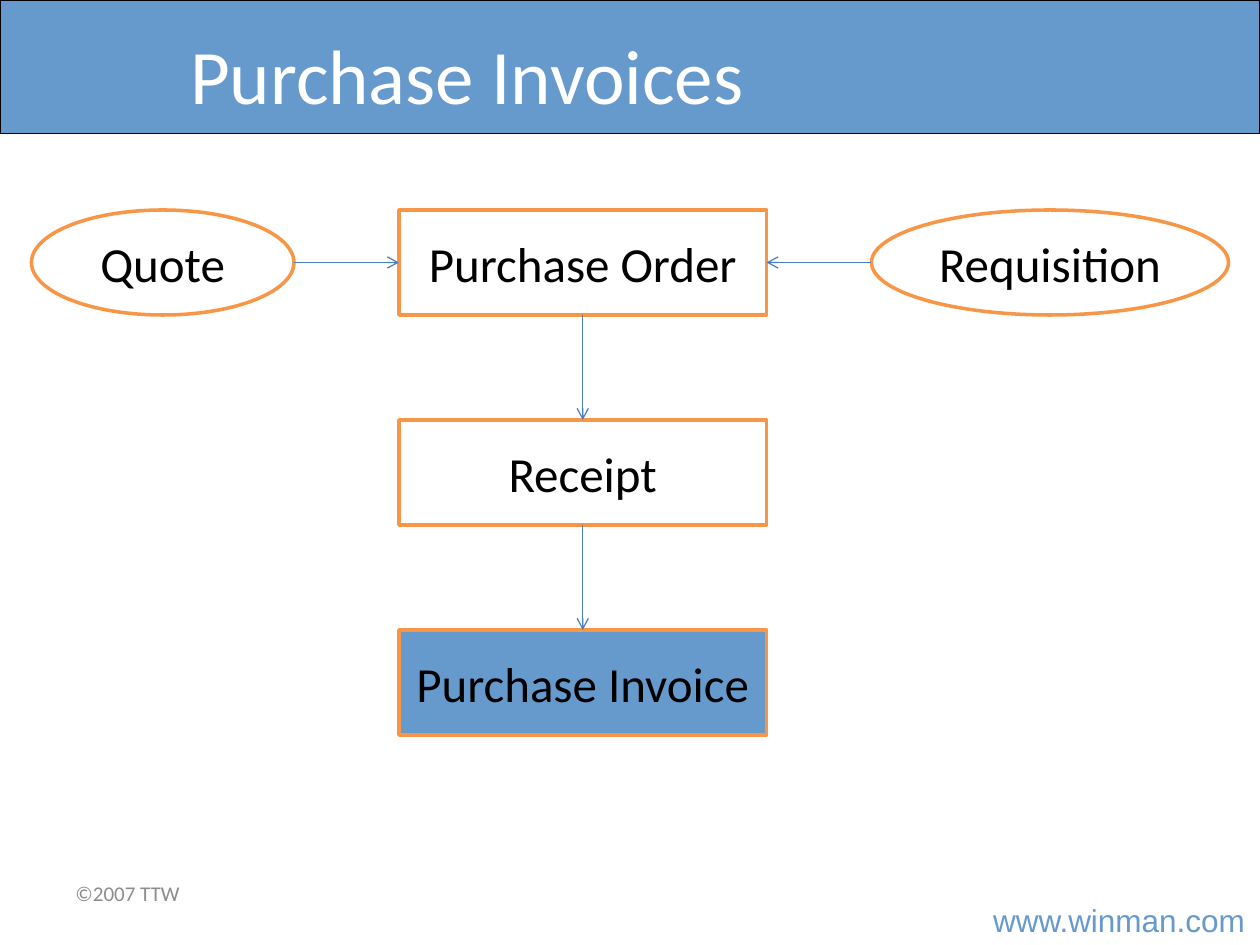
from pptx import Presentation
from pptx.dml.color import RGBColor
from pptx.enum.shapes import MSO_CONNECTOR as Conn, MSO_SHAPE as Shape
from pptx.enum.text import MSO_ANCHOR as Anchor, PP_ALIGN as Align
from pptx.oxml.ns import qn
from pptx.util import Pt
from lxml.etree import SubElement

PX = 7620  # 120 px to the inch
BLUE = RGBColor(0x66, 0x99, 0xCC)
ORANGE = RGBColor(0xF7, 0x96, 0x46)
ARROW = RGBColor(0x4B, 0x7E, 0xBC)
GRAY = RGBColor(0x8C, 0x8C, 0x8C)
BLACK = RGBColor(0, 0, 0)
WHITE = RGBColor(255, 255, 255)


def write(shape, text, size, color, align=Align.CENTER, name="Calibri"):
    frame = shape.text_frame
    frame.text = text
    frame.vertical_anchor = Anchor.MIDDLE
    para = frame.paragraphs[0]
    para.alignment = align
    for key, value in {"size": Pt(size), "name": name}.items():
        setattr(para.font, key, value)
    para.font.color.rgb = color


def draw(kind, box, line, width, fill=None):
    shape = shapes.add_shape(kind, *[v * PX for v in box])
    shape.shadow.inherit = False
    shape.line.color.rgb = line
    shape.line.width = Pt(width)
    if fill is None:
        shape.fill.background()
    else:
        shape.fill.solid()
        shape.fill.fore_color.rgb = fill
    return shape


deck = Presentation()
deck.slide_width, deck.slide_height = 1200 * PX, 900 * PX
slide = deck.slides.add_slide(deck.slide_layouts[5])
shapes = slide.shapes

# Title over its banner
title = shapes.title
place = {"left": 0, "top": 20, "width": 890, "height": 100}
for key, value in place.items():
    setattr(title, key, value * PX)
write(title, "Purchase Invoices", 44, WHITE)
banner = draw(Shape.RECTANGLE, (0, 0, 1200, 127), BLACK, 0.75, BLUE)
title._element.addprevious(banner._element)

# Footer
for text, box, size, color, name, wrap in [
    ("www.winman.com", (934, 852, 266, 48), 18, BLUE, "Arial", False),
    ("©2007 TTW", (60, 820, 280, 62), 12, GRAY, "Calibri", True),
]:
    note = shapes.add_textbox(*[v * PX for v in box])
    note.text_frame.word_wrap = wrap
    write(note, text, size, color, Align.LEFT, name)

# Flow steps: one column of boxes, with an oval on each side of the first
TOP, STEP, HIGH = 200, 200, 100
nodes = {}
for text, kind, left, row, width, fill in [
    ("Quote", Shape.OVAL, 30, 0, 250, None),
    ("Purchase Order", Shape.RECTANGLE, 380, 0, 350, None),
    ("Receipt", Shape.RECTANGLE, 380, 1, 350, None),
    ("Purchase Invoice", Shape.RECTANGLE, 380, 2, 350, BLUE),
    ("Requisition", Shape.OVAL, 830, 0, 340, None),
]:
    box = (left, TOP + row * STEP, width, HIGH)
    node = draw(kind, box, ORANGE, 2, fill)
    write(node, text, 28, BLACK)
    nodes[text] = node

# Arrows: start point, box and side left (None for an oval), box and side reached
for start, source, target, side in [
    ((280, 250), None, "Purchase Order", 1),
    ((830, 250), None, "Purchase Order", 3),
    ((555, 300), "Purchase Order", "Receipt", 0),
    ((555, 500), "Receipt", "Purchase Invoice", 0),
]:
    x, y = [v * PX for v in start]
    arrow = shapes.add_connector(Conn.STRAIGHT, x, y, x, y)
    if source:
        arrow.begin_connect(nodes[source], 2)
    arrow.end_connect(nodes[target], side)
    arrow.line.color.rgb = ARROW
    arrow.line.width = Pt(0.75)
    SubElement(arrow.line._get_or_add_ln(), qn("a:tailEnd"), type="arrow")
    SubElement(arrow._element.spPr, qn("a:effectLst"))

deck.save("out.pptx")
